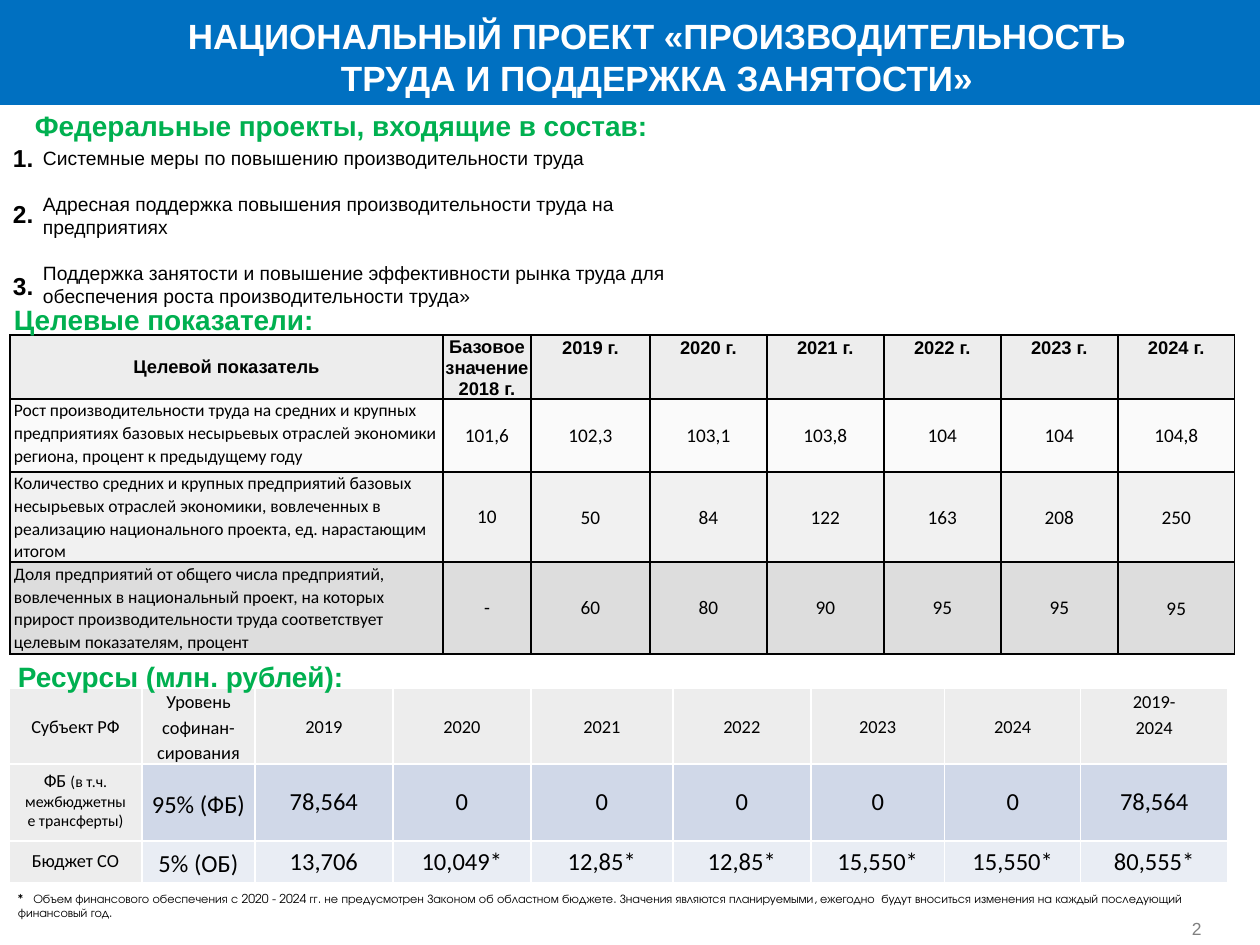
from lxml import etree
from pptx import Presentation
from pptx import util as u
from pptx.dml.color import RGBColor
from pptx.enum import shapes, text
from pptx.oxml.ns import qn

PX = 914400 / 126
HUE = {"blue": "0070C1", "green": "00B050", "black": "000000", "white": "FFFFFF",
       "page": "808080", "head": "EDEDED", "pale": "F2F2F2", "mid": "D9D9D9",
       "dark": "BFBFBF", "side": "DCDCDC", "even": "D0D8E8", "odd": "E9EDF4"}
MID, TOP, LOW = (text.MSO_ANCHOR.MIDDLE, text.MSO_ANCHOR.TOP, text.MSO_ANCHOR.BOTTOM)
CENTER, LEFT = text.PP_ALIGN.CENTER, text.PP_ALIGN.LEFT


def write(frame, words, font, para, hue="black"):
    """Fill a text frame, one paragraph per line of words."""
    for i, line in enumerate(words.split("\n")):
        p = frame.paragraphs[0] if i == 0 else frame.add_paragraph()
        for key, val in para.items():
            if i or key != "space_before":
                setattr(p, key, val)
        run = p.add_run()
        run.text = line
        for key, val in font.items():
            setattr(run.font, key, val)
        run.font.color.rgb = RGBColor.from_string(HUE[hue])


def label(x, y, w, h, words, size, hue="black", bold=False, face="Arial",
          pad=(13, 6), anchor=TOP, **para):
    """Add a wrapped text box."""
    frame = slide.shapes.add_textbox(*[round(n * PX) for n in (x, y, w, h)]).text_frame
    side, rim = [round(n * PX) for n in pad]
    form = {"word_wrap": True, "vertical_anchor": anchor, "margin_left": side,
            "margin_right": side, "margin_top": rim, "margin_bottom": rim}
    for key, val in form.items():
        setattr(frame, key, val)
    write(frame, words, {"name": face, "size": u.Pt(size), "bold": bold}, para, hue)


deck = Presentation()
deck.slide_width, deck.slide_height = round(1260 * PX), round(945 * PX)
slide = deck.slides.add_slide(deck.slide_layouts[6])

# Title band
band = slide.shapes.add_shape(shapes.MSO_SHAPE.RECTANGLE, 0, 0,
                              deck.slide_width, round(105 * PX))
band.shadow.inherit = False
band.fill.solid()
band.fill.fore_color.rgb = RGBColor.from_string(HUE["blue"])
band.line.fill.background()
label(169, 8, 976, 97, "НАЦИОНАЛЬНЫЙ ПРОЕКТ «ПРОИЗВОДИТЕЛЬНОСТЬ ТРУДА И ПОДДЕРЖКА ЗАНЯТОСТИ»",
      20, "white", True, pad=(6, 6), alignment=CENTER)

# Federal projects
for i, y in enumerate((137, 193, 265), 1):
    label(0, y, 707, 43, f"{i}.", 14, bold=True)
label(30, 140, 707, 176,
      "Системные меры по повышению производительности труда\n"
      "Адресная поддержка повышения производительности труда на предприятиях\n"
      "Поддержка занятости и повышение эффективности рынка труда для "
      "обеспечения роста производительности труда»",
      11, space_before=u.Pt(13))

# Cell styles: face, size, bold, align, line spacing, anchor, side and rim padding
STYLE = {
    "A": ("Arial", 10.5, True, CENTER, u.Pt(12), MID, 1, 0),
    "B": ("Arial", 10.5, True, CENTER, u.Pt(12), LOW, 1, 0),
    "C": ("Arial", 10.5, True, CENTER, 1.15, TOP, 1, 0),
    "D": ("Calibri", 10, False, LEFT, 1.07, TOP, 4, 0),
    "E": ("Calibri", 10, False, LEFT, 1.07, MID, 4, 0),
    "F": ("Calibri", 11, False, CENTER, 1.0, MID, 4, 0),
    "G": ("Calibri", 11, False, CENTER, 1.07, MID, 4, 0),
    "H": ("Calibri", 10.5, False, CENTER, 1.15, MID, 9, 0),
    "I": ("Calibri", 10.5, False, CENTER, 1.15, TOP, 9, 0),
    "J": ("Calibri", 10.5, False, CENTER, 1.0, TOP, 13, 6),
    "K": ("Calibri", 10.5, False, CENTER, 1.0, MID, 13, 6),
    "L": ("Calibri", 14, False, CENTER, 1.15, MID, 9, 0),
    "M": ("Calibri", 14, False, CENTER, 1.0, MID, 13, 6),
    "N": ("Calibri", 14, False, CENTER, 1.0, MID, 4, 0),
}
ALPHA = {"pale": 36, "mid": 35, "dark": 52, "side": 50}

# Each row: height, cell styles, first fill, other fill, words
goals = [
    (64, "ABCCCCCC", "head", "head",
     ["Целевой показатель", "Базовое значение 2018 г."]
     + [f"{year} г." for year in range(2019, 2025)]),
    (73, "DFGGGGGG", "pale", "pale",
     ["Рост производительности труда на средних и крупных предприятиях базовых "
      "несырьевых отраслей экономики региона, процент к предыдущему году",
      "101,6", "102,3", "103,1", "103,8", "104", "104", "104,8"]),
    (90, "DFGGGGGG", "mid", "mid",
     ["Количество средних и крупных предприятий базовых несырьевых отраслей "
      "экономики, вовлеченных в реализацию национального проекта, ед. нарастающим итогом",
      "10", "50", "84", "122", "163", "208", "250"]),
    (92, "EFFFFFFG", "dark", "dark",
     ["Доля предприятий от общего числа предприятий, вовлеченных в национальный "
      "проект, на которых прирост производительности труда соответствует целевым "
      "показателям, процент", "-", "60", "80", "90", "95", "95", "95"]),
]
funds = [
    (76, "HHHHHHHHI", "side", "side",
     ["Субъект РФ", "Уровень софинан-сирования"]
     + [str(year) for year in range(2019, 2025)] + ["2019-\n2024"]),
    (77, "JLMMMMMMM", "side", "even",
     ["ФБ ", "95% (ФБ)", "78,564", "0", "0", "0", "0", "0", "78,564"]),
    (41, "KLMNNNNNM", "side", "odd",
     ["Бюджет СО", "5% (ОБ)", "13,706", "10,049*", "12,85*", "12,85*",
      "15,550*", "15,550*", "80,555*"]),
]

# Tables
for x, y, cols, rows, edge in (
        (9, 688, (133, 113, 138, 138, 142, 138, 134, 136, 147), funds, "white"),
        (10, 335, (433, 88, 119) + (117,) * 5, goals, "black")):
    size = x, y, sum(cols), sum(row[0] for row in rows)
    grid = slide.shapes.add_table(len(rows), len(cols),
                                  *[round(n * PX) for n in size]).table
    grid.first_row = grid.horz_banding = False
    for col, w in zip(grid.columns, cols):
        col.width = round(w * PX)
    for r, (h, keys, first, rest, words) in enumerate(rows):
        grid.rows[r].height = round(h * PX)
        for c, (key, word) in enumerate(zip(keys, words)):
            cell = grid.cell(r, c)
            face, pt, bold, align, gap, anchor, side, rim = STYLE[key]
            form = {"vertical_anchor": anchor,
                    "margin_left": round(side * PX), "margin_right": round(side * PX),
                    "margin_top": round(rim * PX), "margin_bottom": round(rim * PX)}
            for name, val in form.items():
                setattr(cell, name, val)
            write(cell.text_frame, word, {"name": face, "size": u.Pt(pt), "bold": bold},
                  {"alignment": align, "line_spacing": gap})
            fill = rest if c else first
            cell.fill.solid()
            cell.fill.fore_color.rgb = RGBColor.from_string(HUE[fill])
            prop = cell._tc.get_or_add_tcPr()
            if fill in ALPHA:
                tint = prop.find(".//" + qn("a:srgbClr"))
                etree.SubElement(tint, qn("a:alpha"), val=str(ALPHA[fill] * 1000))
            # Borders come before the fill
            for i, tag in enumerate(("lnL", "lnR", "lnT", "lnB")):
                line = etree.Element(qn("a:" + tag), w=str(u.Pt(1)))
                ink = etree.SubElement(line, qn("a:solidFill"))
                etree.SubElement(ink, qn("a:srgbClr"), val=HUE[edge])
                prop.insert(i, line)
    if rows is funds:
        run = grid.cell(1, 0).text_frame.paragraphs[0].add_run()
        run.text = "(в т.ч. межбюджетные трансферты)"
        run.font.name, run.font.size = "Calibri", u.Pt(9)
        run.font.color.rgb = RGBColor.from_string(HUE["black"])

# Section headings, in front of the tables they touch
for x, y, w, words in ((22, 103, 707, "Федеральные проекты, входящие в состав:"),
                       (1, 297, 456, "Целевые показатели:"),
                       (5, 654, 365, "Ресурсы (млн. рублей):")):
    label(x, y, w, 47, words, 16, "green", True)

# Footnote and page number
label(5, 885, 1225, 43,
      "*   Объем финансового обеспечения с 2020 - 2024 гг. не предусмотрен Законом об "
      "областном бюджете. Значения являются планируемыми, ежегодно  будут вноситься "
      "изменения на каждый последующий финансовый год.", 7, face="TeX Gyre Adventor")
label(1186, 895, 71, 50, "2", 10, "page", pad=(6, 6), anchor=LOW)

deck.save("out.pptx")
